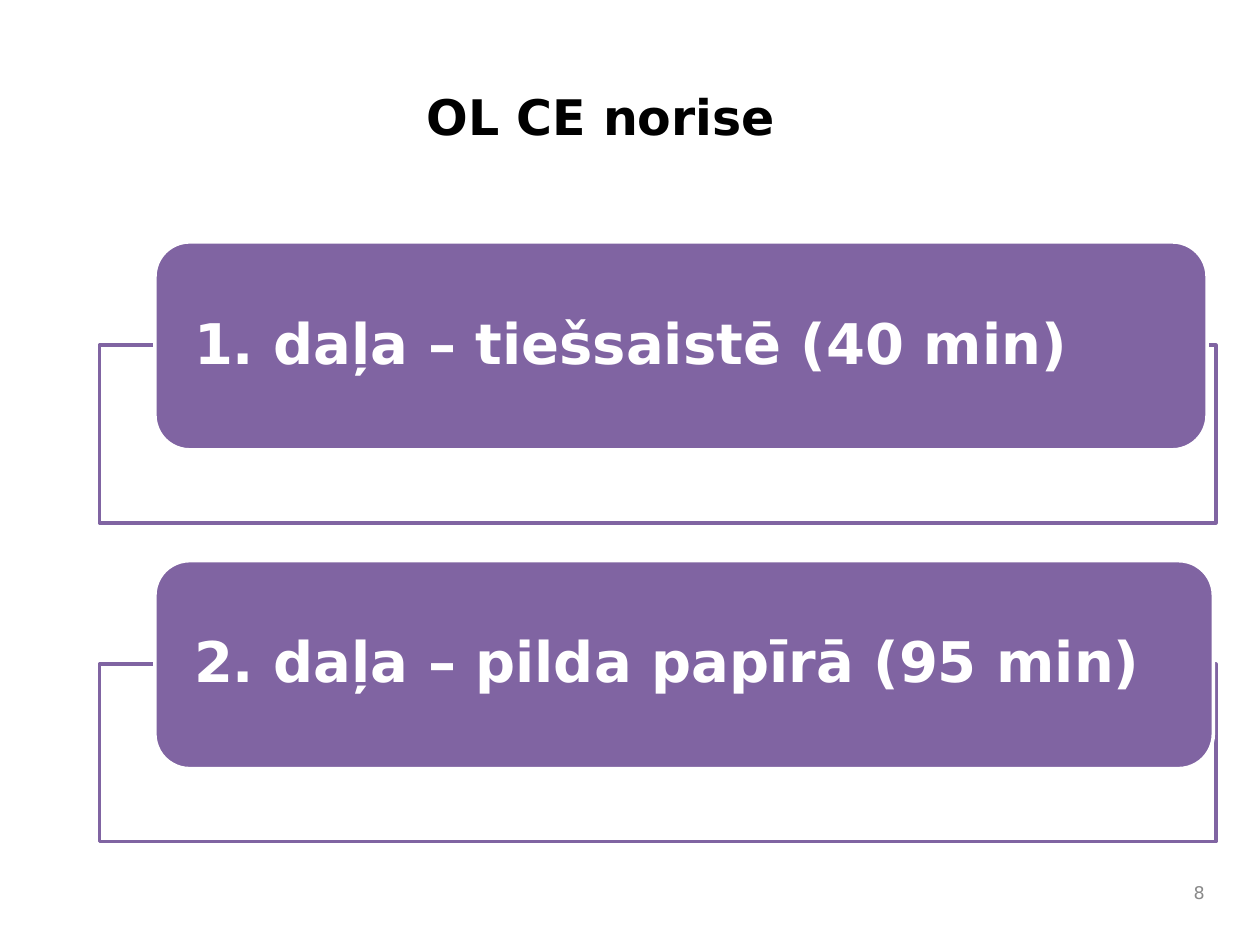
from dataclasses import dataclass

from pptx import Presentation
from pptx import util as u
from pptx.dml.color import RGBColor
from pptx.enum import shapes, text

SLIDE_W, SLIDE_H = 10, 7.5
FONT = "DejaVu Sans"
COLORS = {"purple": "8064A2", "white": "FFFFFF", "black": "000000", "grey": "898989"}

# Grid of the exam parts, in inches
FRAME_LEFT, FRAME_W, FRAME_H = 0.79, 8.86, 1.41
CARD_LEFT, CARD_H = 1.23, 1.65
FIRST_ROW, ROW_STEP = 1.92, 2.53
FRAME_DROP = 0.82


@dataclass
class ExamPart:
    label: str
    card_width: float


PARTS = [
    ExamPart("1. daļa – tiešsaistē (40 min)", 8.35),
    ExamPart("2. daļa – pilda papīrā (95 min)", 8.4),
]


def rgb(name: str) -> RGBColor:
    return RGBColor.from_string(COLORS[name])


def inches(*lengths: float) -> list[u.Length]:
    return [u.Inches(v) for v in lengths]


def set_text(sp, words: str, size: int, color: str, bold: bool = False,
             align=text.PP_ALIGN.LEFT, anchor=text.MSO_ANCHOR.MIDDLE,
             inset_x: float = 0.1, inset_y: float = 0.05):
    """Write one paragraph into a shape and return the paragraph."""
    tf = sp.text_frame
    tf.word_wrap = True
    tf.vertical_anchor = anchor
    tf.margin_left = tf.margin_right = u.Inches(inset_x)
    tf.margin_top = tf.margin_bottom = u.Inches(inset_y)
    p = tf.paragraphs[0]
    p.text = words
    p.alignment = align
    p.font.name, p.font.size, p.font.bold = FONT, u.Pt(size), bold
    p.font.color.rgb = rgb(color)
    return p


def add_box(s, kind, box: tuple[float, ...], fill: str, line: str):
    sp = s.shapes.add_shape(kind, *inches(*box))
    sp.shadow.inherit = False
    sp.fill.solid()
    sp.fill.fore_color.rgb = rgb(fill)
    sp.line.color.rgb = rgb(line)
    sp.line.width = u.Pt(2)
    return sp


def add_part(s, part: ExamPart, row: int) -> None:
    """Draw an outlined frame with a labelled card over its upper edge."""
    top = FIRST_ROW + row * ROW_STEP
    add_box(s, shapes.MSO_SHAPE.RECTANGLE,
            (FRAME_LEFT, top + FRAME_DROP, FRAME_W, FRAME_H), "white", "purple")
    card = add_box(s, shapes.MSO_SHAPE.ROUNDED_RECTANGLE,
                   (CARD_LEFT, top, part.card_width, CARD_H), "purple", "white")
    p = set_text(card, part.label, 32, "white", bold=True, inset_x=0.23, inset_y=0)
    p.line_spacing = 0.9


def main() -> None:
    prs = Presentation()
    prs.slide_width, prs.slide_height = inches(SLIDE_W, SLIDE_H)
    s = prs.slides.add_slide(prs.slide_layouts[6])

    title = s.shapes.add_textbox(*inches(3.29, 0.64, 6.21, 1.13))
    set_text(title, "OL CE norise", 28, "black", bold=True, anchor=text.MSO_ANCHOR.TOP)

    for row, part in enumerate(PARTS):
        add_part(s, part, row)

    number = s.shapes.add_textbox(*inches(9.33, 6.92, 0.33, 0.33))
    set_text(number, "8", 10, "grey", align=text.PP_ALIGN.RIGHT)

    prs.save("out.pptx")


if __name__ == "__main__":
    main()
